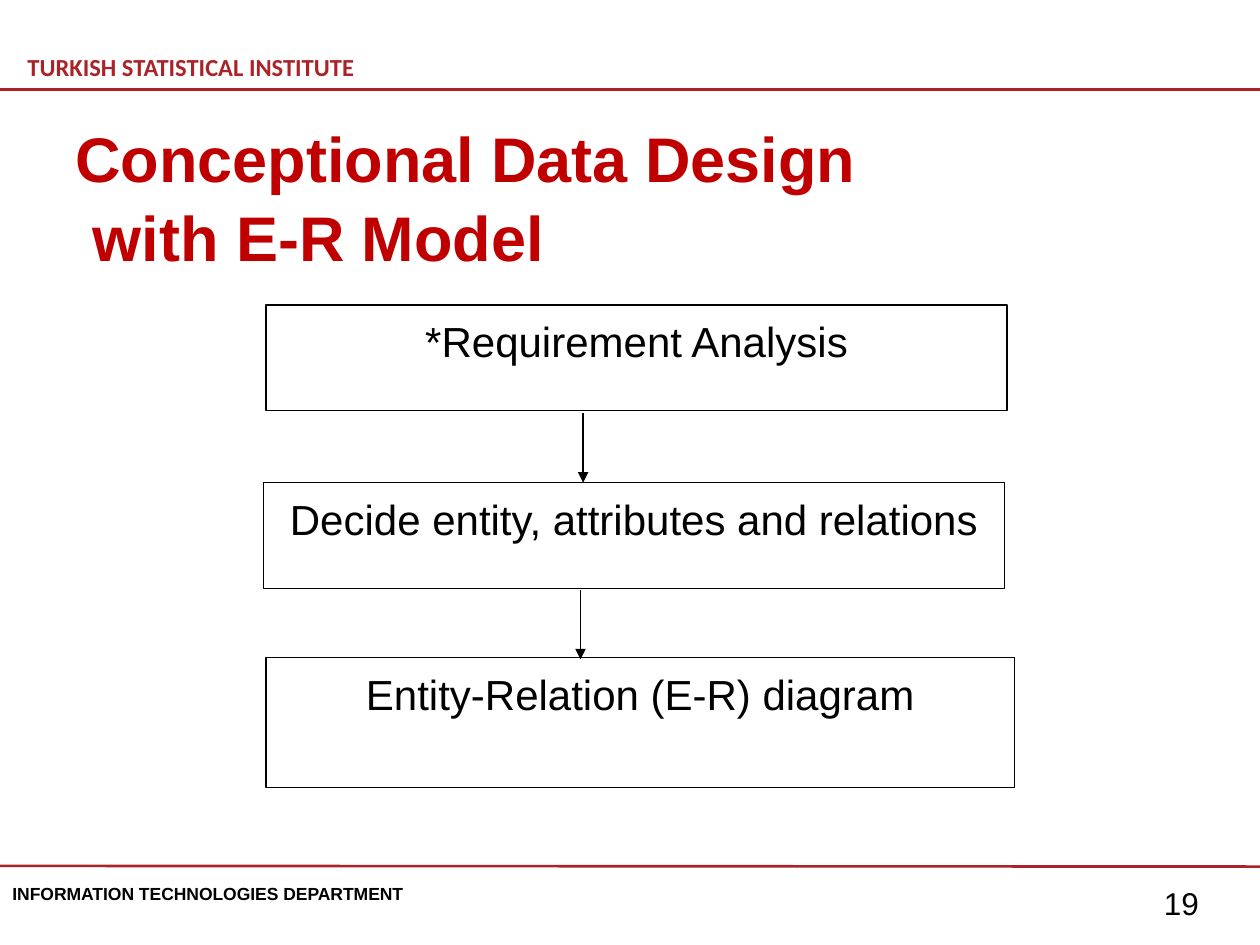
from lxml import etree
from pptx import Presentation
from pptx.dml.color import RGBColor
from pptx.enum.shapes import MSO_CONNECTOR, MSO_SHAPE
from pptx.enum.text import MSO_ANCHOR, PP_ALIGN
from pptx.oxml.ns import qn
from pptx.util import Pt

prs = Presentation()
prs.slide_width, prs.slide_height = Pt(720), Pt(540)
slide = prs.slides.add_slide(prs.slide_layouts[6])
shapes = slide.shapes


def color(code):
    return RGBColor.from_string(code)


def write(shape, lines, size, code="000000", bold=False, font="Arial",
          top=3.6, wrap=True, align=PP_ALIGN.LEFT):
    frame = shape.text_frame
    frame.word_wrap = wrap
    frame.vertical_anchor = MSO_ANCHOR.TOP
    frame.margin_top = Pt(top)
    frame.text = "\n".join(lines)
    for para in frame.paragraphs:
        para.alignment = align
        para.font.name = font
        para.font.size = Pt(size)
        para.font.bold = bold
        para.font.color.rgb = color(code)
    return frame


# Header, footer and page number
labels = [
    (8.64, 26, 255, 28, "TURKISH STATISTICAL INSTITUTE", 14, "AB2328", True, "Calibri", 3.6),
    (0, 500.4, 242, 19.4, "INFORMATION TECHNOLOGIES DEPARTMENT", 10, "000000", True, "Arial", 4),
    (658, 500.4, 50.4, 28.8, "19", 18, "000000", False, "Arial", 5),
]
for left, top, width, height, text, size, code, bold, font, inset in labels:
    box = shapes.add_textbox(Pt(left), Pt(top), Pt(width), Pt(height))
    write(box, [text], size, code, bold, font, inset)

# Title, second line slightly indented
title = shapes.add_textbox(Pt(36), Pt(62), Pt(648), Pt(90))
frame = write(title, ["Conceptional Data Design", "with E-R Model"],
              36, "C00000", True, top=6.5)
second = frame.paragraphs[1]
second.space_before = Pt(1.5)
props = second._p.get_or_add_pPr()
props.set("marL", str(Pt(10)))
props.set("indent", "0")

# Process steps
steps = [
    (152, 174.3, 423.4, 60.5, "*Requirement Analysis"),
    (150.5, 275.8, 423.4, 60.5, "Decide entity, attributes and relations"),
    (152, 375.8, 427.7, 74.2, "Entity-Relation (E-R) diagram"),
]
for left, top, width, height, text in steps:
    box = shapes.add_shape(MSO_SHAPE.RECTANGLE, Pt(left), Pt(top), Pt(width), Pt(height))
    box.shadow.inherit = False
    box.fill.background()
    box.line.color.rgb = color("000000")
    box.line.width = Pt(0.75)
    write(box, [text], 24, top=6, wrap=False, align=PP_ALIGN.CENTER)

# Rules above and below the content, then arrows between steps
lines = [
    (0, 51, 720, 51, "AB2328", 1.5, False),
    (0, 494.8, 720, 495.2, "AB2328", 1.5, False),
    (333.2, 236, 333.2, 275.8, "000000", 0.75, True),
    (331.7, 337, 331.7, 376.8, "000000", 0.75, True),
]
for x1, y1, x2, y2, code, width, arrow in lines:
    line = shapes.add_connector(MSO_CONNECTOR.STRAIGHT, Pt(x1), Pt(y1), Pt(x2), Pt(y2))
    line.line.color.rgb = color(code)
    line.line.width = Pt(width)
    if arrow:
        tail = etree.SubElement(line.line._get_or_add_ln(), qn("a:tailEnd"))
        tail.set("type", "triangle")
    etree.SubElement(line._element.spPr, qn("a:effectLst"))

prs.save("out.pptx")
